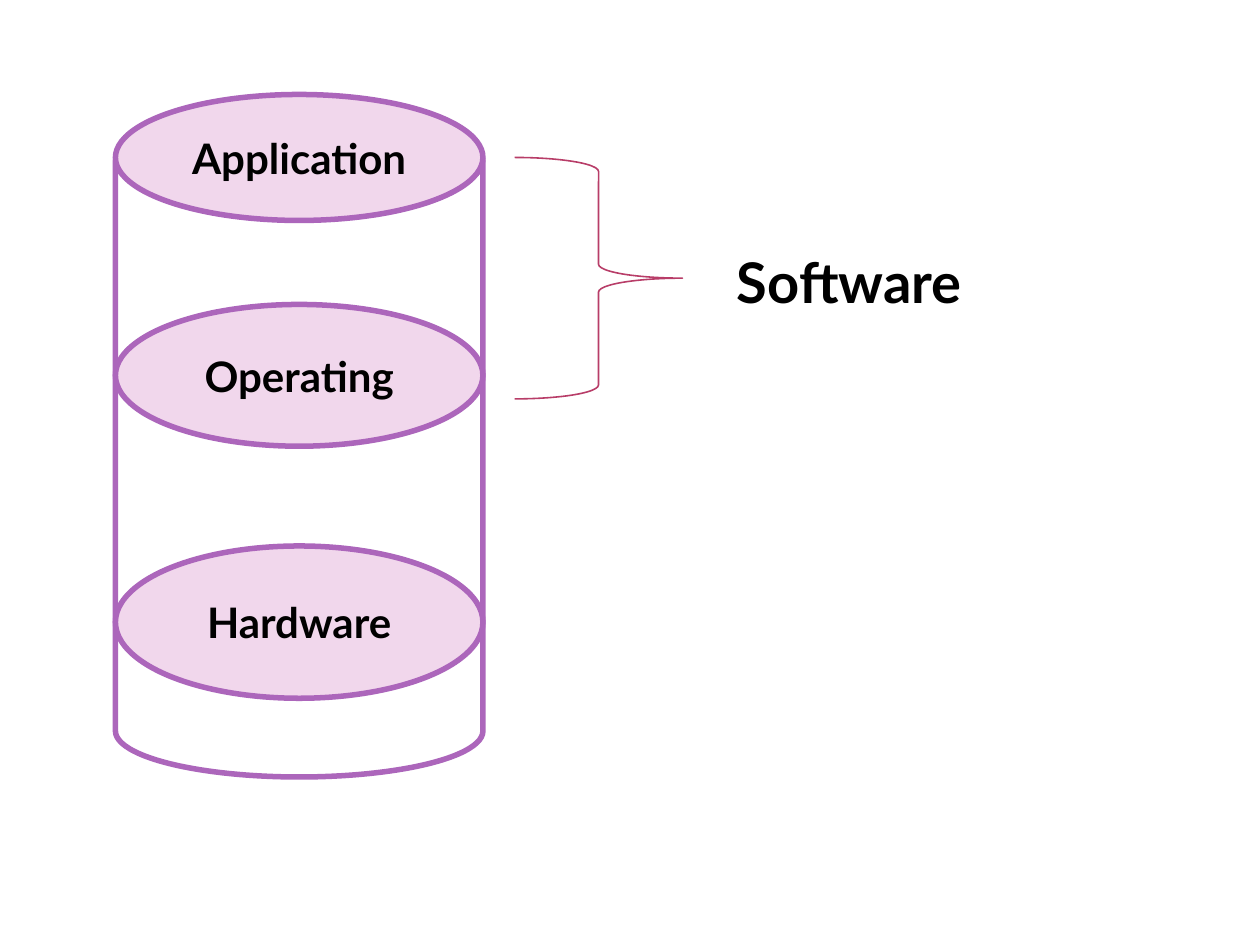
"""Build a slide that shows the layers of a computer system."""
import collections

import pptx
import pptx.dml.color
import pptx.enum.shapes
import pptx.enum.text
import pptx.util

COLORS = {"paper": "FFFFFF", "layer": "F1D7EC", "outline": "AC66BB",
          "brace": "B83D68", "text": "000000"}
FONT = "Lato"
CELL = pptx.util.Inches(1) // 12
SHAPES = pptx.enum.shapes.MSO_SHAPE
ALIGN = pptx.enum.text.PP_ALIGN
ANCHOR = pptx.enum.text.MSO_ANCHOR

Box = collections.namedtuple("Box", "column row columns rows")


def color(name):
    """Return the named colour."""
    return pptx.dml.color.RGBColor.from_string(COLORS[name])


def place(box):
    """Convert a box in grid cells to slide lengths."""
    return [pptx.util.Emu(int(cells * CELL)) for cells in box]


def add_outline(page, kind, box, line, weight, fill=None):
    """Add a preset shape with a line and an optional fill."""
    shape = page.shapes.add_shape(kind, *place(box))
    shape.shadow.inherit = False
    shape.line.color.rgb = color(line)
    shape.line.width = pptx.util.Pt(weight)
    if fill:
        shape.fill.solid()
        shape.fill.fore_color.rgb = color(fill)
    else:
        shape.fill.background()
    return shape


def write(shape, text, size, align=ALIGN.LEFT, anchor=ANCHOR.TOP, bold=True):
    """Write one formatted paragraph in a shape."""
    frame = shape.text_frame
    frame.word_wrap = True
    frame.vertical_anchor = anchor
    para = frame.paragraphs[0]
    para.alignment = align
    span = para.add_run()
    span.text = text
    span.font.name = FONT
    span.font.size = pptx.util.Pt(size)
    span.font.bold = bold
    span.font.color.rgb = color("text")


def add_layers(page, box, layers):
    """Draw the cylinder and its layers, each given by offset and height."""
    add_outline(page, SHAPES.CAN, box, "outline", 3.15, "paper")
    for text, offset, rows in layers:
        disc = box._replace(row=box.row + offset, rows=rows)
        shape = add_outline(page, SHAPES.OVAL, disc, "outline", 3.15, "layer")
        write(shape, text, 24, align=ALIGN.CENTER, anchor=ANCHOR.MIDDLE)


def add_group_label(page, box, text):
    """Draw a brace at the left of the box and its label at the right."""
    brace = box._replace(columns=16)
    add_outline(page, SHAPES.RIGHT_BRACE, brace, "brace", 0.9)
    label = Box(box.column + 20, box.row + 8, box.columns - 20, 7.7)
    shape = page.shapes.add_textbox(*place(label))
    write(shape, text, 32)
    shape.text_frame.auto_size = pptx.enum.text.MSO_AUTO_SIZE.SHAPE_TO_FIT_TEXT


def main():
    """Build and save the deck."""
    deck = pptx.Presentation()
    deck.slide_width = 120 * CELL
    deck.slide_height = 90 * CELL
    page = deck.slides.add_slide(deck.slide_layouts.get_by_name("Blank"))
    page.background.fill.solid()
    page.background.fill.fore_color.rgb = color("paper")
    add_layers(page, Box(11, 11, 35, 63), [
        ("Operating", 18, 13.5),
        ("Hardware", 41, 14.5),
        ("Application", -2, 12),
    ])
    add_group_label(page, Box(49, 15, 46, 23), "Software")
    deck.save("out.pptx")


if __name__ == "__main__":
    main()
